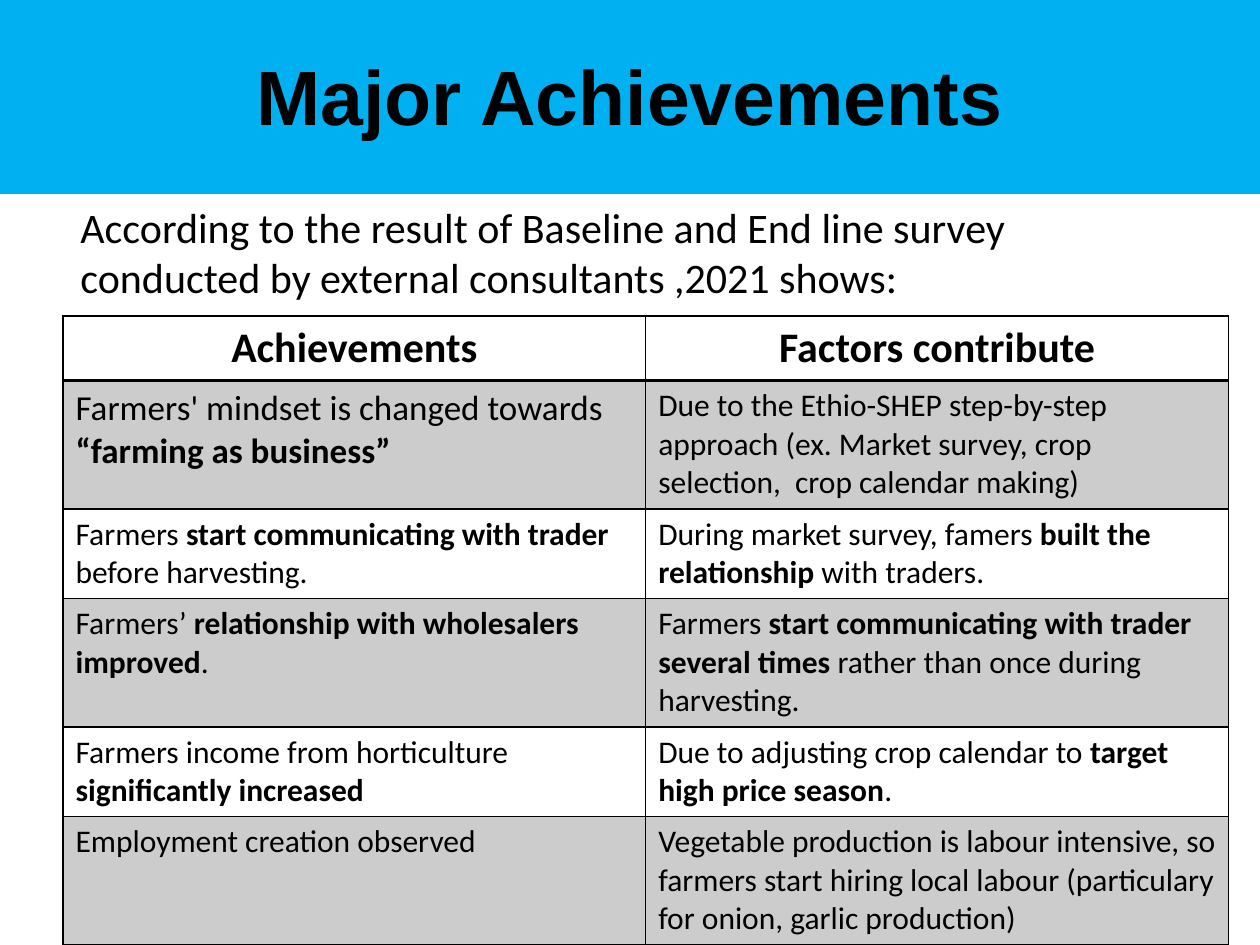
from dataclasses import dataclass

from lxml.etree import SubElement
from pptx import Presentation
from pptx.dml.color import RGBColor
from pptx.enum.text import MSO_ANCHOR, PP_ALIGN
from pptx.oxml import parse_xml
from pptx.oxml.ns import nsdecls, qn
from pptx.util import Inches, Pt


@dataclass(frozen=True)
class Theme:
    band: str = "00B0F0"
    ink: str = "000000"
    shade_alpha: int = 20000
    title_font: str = "Arial"
    body_font: str = "Calibri"
    title: int = 44
    lead: int = 24
    emphasis: int = 20
    cell: int = 18


theme = Theme()


def write(tf, text, size=theme.cell, font=theme.body_font, bold=False,
          align=PP_ALIGN.LEFT, before=0):
    tf.word_wrap = True
    p = tf.paragraphs[0]
    p.alignment = align
    p.space_before = Pt(before)
    for i, part in enumerate(text.split("**")):
        if part:
            r = p.add_run()
            r.text = part
            r.font.name = font
            r.font.size = Pt(size)
            r.font.bold = bold or i % 2 == 1
            r.font.color.rgb = RGBColor.from_string(theme.ink)


def set_borders(cell, **widths):
    tcPr = cell._tc.get_or_add_tcPr()
    for i, side in enumerate("LRTB"):
        width = Pt(widths.get(side, 1))
        tcPr.insert(i, parse_xml(
            f'<a:ln{side} {nsdecls("a")} w="{width}"><a:solidFill>'
            f'<a:srgbClr val="{theme.ink}"/></a:solidFill></a:ln{side}>'))


prs = Presentation()
prs.slide_width, prs.slide_height = Inches(10), Inches(7.5)
s = prs.slides.add_slide(prs.slide_layouts[5])

title = s.shapes.title
title.left, title.top = Inches(0), Inches(-0.04)
title.width, title.height = Inches(10), Inches(1.58)
title.fill.solid()
title.fill.fore_color.rgb = RGBColor.from_string(theme.band)
title.text_frame.vertical_anchor = MSO_ANCHOR.MIDDLE
write(title.text_frame, "Major Achievements", size=theme.title,
      font=theme.title_font, bold=True, align=PP_ALIGN.CENTER)

lead = s.shapes.add_textbox(Inches(0.54), Inches(1.55), Inches(9), Inches(0.95))
write(lead.text_frame,
      "According to the result of Baseline and End line survey "
      "conducted by external consultants ,2021 shows:",
      size=theme.lead, before=5)

rows = [
    ("Achievements", "Factors contribute"),
    ("Farmers' mindset is changed towards **“farming as business”**",
     "Due to the Ethio-SHEP step-by-step approach (ex. Market survey, "
     "crop selection,  crop calendar making)"),
    ("Farmers **start communicating with trader **before harvesting.",
     "During market survey, famers **built the relationship** with traders."),
    ("Farmers’ **relationship with wholesalers improved**.",
     "Farmers **start communicating with trader several times** "
     "rather than once during harvesting."),
    ("Farmers income from horticulture **significantly increased**",
     "Due to adjusting crop calendar to **target high price season**."),
    ("Employment creation observed",
     "Vegetable production is labour intensive, so farmers start hiring "
     "local labour (particulary for onion, garlic production)"),
]
heights = [0.51, 1.02, 0.71, 1.02, 0.71, 1.02]

table = s.shapes.add_table(len(rows), 2, Inches(0.5), Inches(2.51),
                           Inches(9.25), Inches(sum(heights))).table
table.first_row = table.horz_banding = False
for col in table.columns:
    col.width = Inches(4.625)

for i, (texts, height) in enumerate(zip(rows, heights)):
    table.rows[i].height = Inches(height)
    for j, text in enumerate(texts):
        cell = table.cell(i, j)
        if i == 0:
            write(cell.text_frame, text, size=theme.lead, bold=True,
                  align=PP_ALIGN.CENTER)
        else:
            size = theme.emphasis if (i, j) == (1, 0) else theme.cell
            write(cell.text_frame, text, size=size)
        if i % 2:
            cell.fill.solid()
            cell.fill.fore_color.rgb = RGBColor.from_string(theme.ink)
            color = cell._tc.tcPr.find(qn("a:solidFill")).find(qn("a:srgbClr"))
            SubElement(color, qn("a:alpha")).set("val", str(theme.shade_alpha))
        else:
            cell.fill.background()
        set_borders(cell, T=2 if i == 1 else 1, B=2 if i == 0 else 1)

prs.save("out.pptx")
